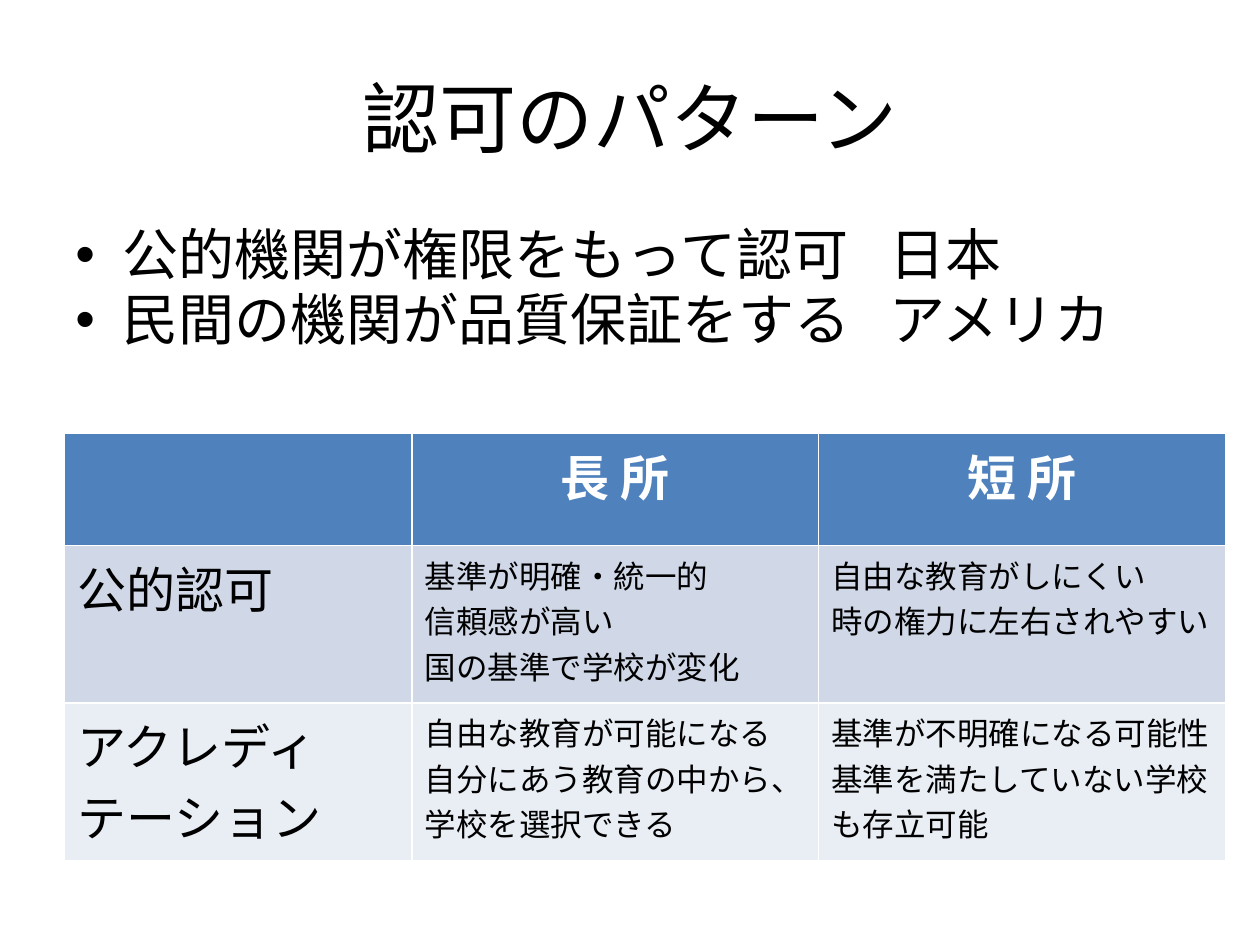
"""Build a slide on accreditation patterns with a comparison table."""
from lxml import etree
from pptx import Presentation
from pptx import util as u
from pptx.dml.color import RGBColor
from pptx.enum import text
from pptx.oxml import ns

COLORS = {"ink": "000000", "paper": "FFFFFF", "header": "4F81BD",
          "band": "D0D8E8", "light": "E9EDF4"}
BULLETS = ["公的機関が権限をもって認可\t日本", "民間の機関が品質保証をする\tアメリカ"]
ROWS = [
    [[], ["長 所"], ["短 所"]],
    [["公的認可"],
     ["基準が明確・統一的", "信頼感が高い", "国の基準で学校が変化"],
     ["自由な教育がしにくい", "時の権力に左右されやすい"]],
    [["アクレディテーション"],
     ["自由な教育が可能になる", "自分にあう教育の中から、学校を選択できる"],
     ["基準が不明確になる可能性", "基準を満たしていない学校も存立可能"]],
]


class SlideBuilder:
    """Hold the style and the current slide."""

    font_name = "Calibri"

    def __init__(self, slide):
        self.slide = slide

    def style(self, paragraph, size, color="ink", bold=False, **values):
        """Apply font and paragraph values."""
        font_values = {"name": self.font_name, "size": u.Pt(size), "bold": bold}
        for target, settings in ((paragraph.font, font_values), (paragraph, values)):
            for name, value in settings.items():
                setattr(target, name, value)
        paragraph.font.color.rgb = RGBColor.from_string(COLORS[color])

    def paragraphs(self, frame, lines):
        """Fill a text frame and yield its paragraphs."""
        for index, line in enumerate(lines):
            paragraph = frame.add_paragraph() if index else frame.paragraphs[0]
            paragraph.text = line
            yield paragraph

    def title(self, wording, box):
        """Place and format the title placeholder."""
        shape = self.slide.shapes.title
        for name, value in zip(("left", "top", "width", "height"), box):
            setattr(shape, name, u.Pt(value))
        shape.text_frame.vertical_anchor = text.MSO_ANCHOR.MIDDLE
        for paragraph in self.paragraphs(shape.text_frame, [wording]):
            self.style(paragraph, 44, alignment=text.PP_ALIGN.CENTER)

    def bullets(self, lines, box, indent=27, tab=465):
        """Add a bulleted list with one tab stop."""
        shape = self.slide.shapes.add_textbox(*map(u.Pt, box))
        shape.text_frame.word_wrap = True
        for index, paragraph in enumerate(self.paragraphs(shape.text_frame, lines)):
            properties = paragraph._p.get_or_add_pPr()
            properties.set("marL", str(u.Pt(indent)))
            properties.set("indent", str(u.Pt(-indent)))
            etree.SubElement(properties, ns.qn("a:buFont"), typeface="Arial")
            etree.SubElement(properties, ns.qn("a:buChar"), char="•")
            tabs = etree.SubElement(properties, ns.qn("a:tabLst"))
            etree.SubElement(tabs, ns.qn("a:tab"), pos=str(u.Pt(tab)), algn="l")
            self.style(paragraph, 32, line_spacing=0.9,
                       space_before=u.Pt(3 if index else 0))

    def table(self, rows, left, top, widths, heights):
        """Add a table with a header row and a label column."""
        box = (left, top, sum(widths), sum(heights))
        table = self.slide.shapes.add_table(
            len(rows), len(widths), *map(u.Pt, box)).table
        for column, width in zip(table.columns, widths):
            column.width = u.Pt(width)
        for row, height in zip(table.rows, heights):
            row.height = u.Pt(height)
        for row_index, (row, fill) in enumerate(zip(rows, ("header", "band", "light"))):
            header = row_index == 0
            for column_index, lines in enumerate(row):
                cell = table.cell(row_index, column_index)
                cell.fill.solid()
                cell.fill.fore_color.rgb = RGBColor.from_string(COLORS[fill])
                size = 28 if header or column_index == 0 else 18
                for paragraph in self.paragraphs(cell.text_frame, lines):
                    self.style(
                        paragraph, size, "paper" if header else "ink", header,
                        alignment=text.PP_ALIGN.CENTER if header else text.PP_ALIGN.LEFT)


def main():
    """Build and save the presentation."""
    presentation = Presentation()
    presentation.slide_width, presentation.slide_height = u.Pt(720), u.Pt(540)
    slide = presentation.slides.add_slide(presentation.slide_layouts[5])
    builder = SlideBuilder(slide)
    builder.title("認可のパターン", (36, 21.6, 648, 90))
    builder.bullets(BULLETS, (36, 126, 648, 356.4))
    builder.table(ROWS, 37, 247.7, (198.4, 232.4, 232.4), (64, 90, 90))
    presentation.save("out.pptx")


if __name__ == "__main__":
    main()
